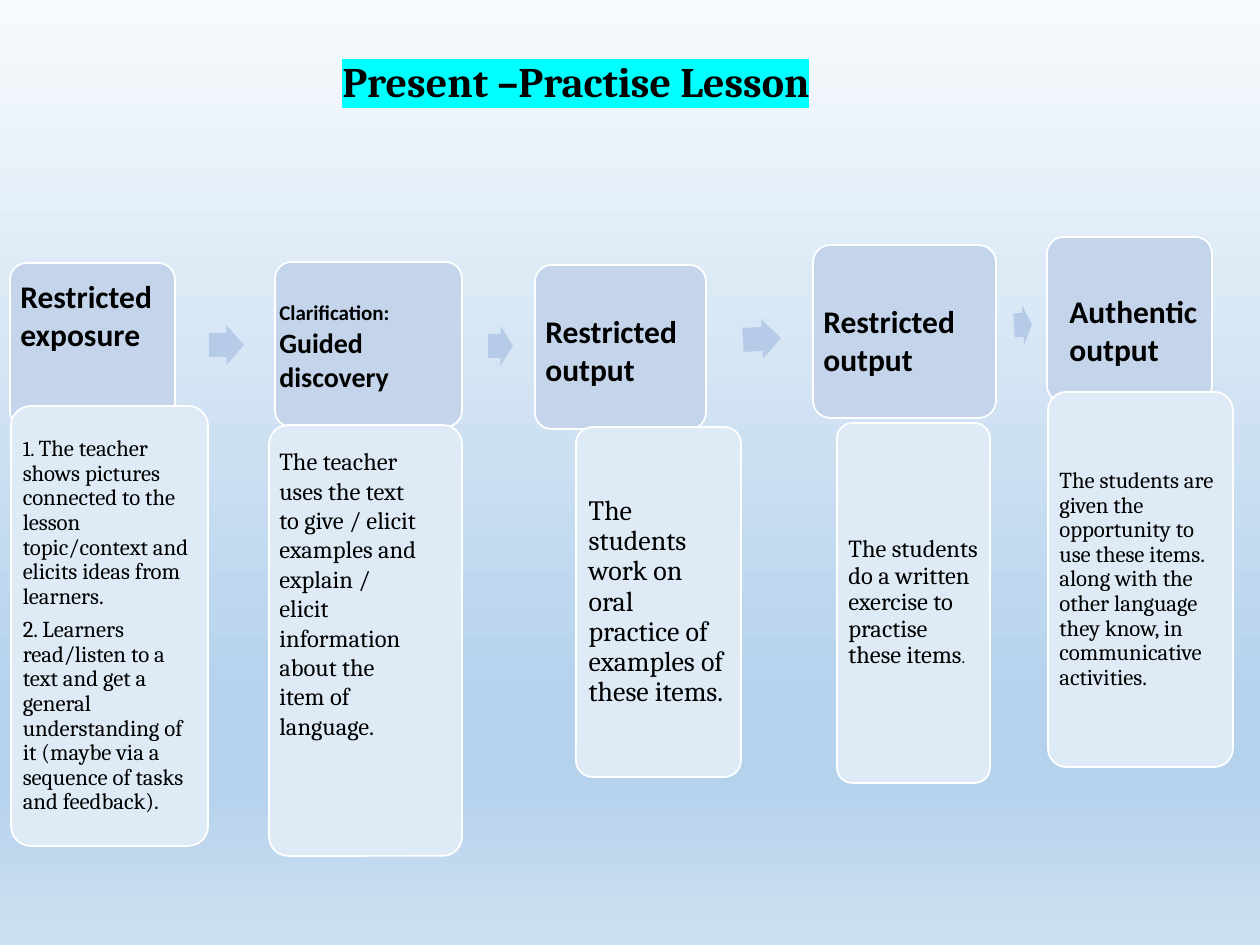
from lxml import etree
from pptx import Presentation
from pptx.dml.color import RGBColor
from pptx.enum.shapes import MSO_SHAPE
from pptx.enum.text import MSO_ANCHOR, MSO_AUTO_SIZE, PP_ALIGN
from pptx.oxml.ns import qn
from pptx.util import Emu, Pt

ROUNDED = MSO_SHAPE.ROUNDED_RECTANGLE
ARROW = MSO_SHAPE.RIGHT_ARROW
MIDDLE = MSO_ANCHOR.MIDDLE
LEFT = PP_ALIGN.LEFT
GROW = MSO_AUTO_SIZE.SHAPE_TO_FIT_TEXT
PX = 914400 / 126
HEAD_FONT, BODY_FONT = "Calibri", "Cambria"
COLORS = {
    "header": "C4D5EB",
    "body": "DEEBF7",
    "arrow": "B5CBE7",
    "outline": "FFFFFF",
    "text": "000000",
    "highlight": "00FFFF",
}
BACKGROUND = [(0, "F7FAFD"), (74, "B5D2EC"), (83, "B5D2EC"), (100, "CEE1F2")]

# Each stage: header box, body box, body inset, body paragraphs of (text, size) runs
STAGES = [
    ((10, 263, 165, 165), (11, 406, 197, 440), 6, [
        [("1. ", 12), ("The teacher shows pictures connected to the lesson "
                       "topic/context and elicits ideas from learners.", 13)],
        [("2. Learners read/listen to a text and get a general understanding of it "
          "(maybe via a sequence of tasks and feedback).", 13)],
    ]),
    ((275, 262, 187, 165), (269, 425, 193, 431), 6, []),
    ((535, 265, 171, 164), (576, 427, 165, 350), 8, [
        [("The students work on oral practice of examples of these items.", 16)],
    ]),
    ((813, 245, 183, 173), (837, 423, 153, 360), 7, [
        [("The students do a written exercise to practise these items", 14), (".", 10)],
    ]),
    ((1047, 237, 165, 165), (1048, 392, 185, 375), 6, [
        [("The students are given the opportunity to use these items. along with the "
          "other language they know, in communicative activities.", 13)],
    ]),
]
ARROWS = [
    ((209, 325, 35, 40), -0.4),
    ((488, 326, 25, 40), 0.6),
    ((743, 319, 38, 40), -3.1),
    ((1014, 305, 18, 40), -3.1),
]
HEADINGS = [
    ((8, 271, 170, 89), [[("Restricted", 18)], [("exposure", 18)]]),
    ((533, 306, 163, 89), [[("Restricted output", 18)]]),
    ((811, 296, 180, 89), [[("Restricted output", 18)]]),
    ((1057, 286, 170, 89), [[("Authentic output", 18)]]),
    ((267, 286, 150, 115), [[("Clarification:", 12), (" Guided discovery", 16)]]),
]
EXPLANATION = [[("The teacher uses the text to give / elicit examples and explain / "
                 "elicit information about the item of language.", 14)]]
TITLE = [[("Present –Practise Lesson", 24)]]


def emu(box):
    return [Emu(round(n * PX)) for n in box]


def rgb(name):
    return RGBColor.from_string(COLORS[name])


def set_background(s):
    fill = s.background.fill
    fill.gradient()
    fill.gradient_angle = 270
    stops = s.element.find(".//" + qn("a:gsLst"))
    for stop in list(stops):
        stops.remove(stop)
    for pos, color in BACKGROUND:
        gs = etree.SubElement(stops, qn("a:gs"), pos=str(pos * 1000))
        etree.SubElement(gs, qn("a:srgbClr"), val=color)


def add_run(p, text, size, font, bold=False, highlight=None):
    r = p.add_run()
    r.text = text
    r.font.size = Pt(size)
    r.font.bold = bold
    r.font.color.rgb = rgb("text")
    if highlight:
        mark = etree.SubElement(r.font._element, qn("a:highlight"))
        etree.SubElement(mark, qn("a:srgbClr"), val=COLORS[highlight])
    r.font.name = font


def write(tf, paragraphs, font, **style):
    tf.word_wrap = True
    for i, runs in enumerate(paragraphs):
        p = tf.add_paragraph() if i else tf.paragraphs[0]
        p.alignment = LEFT
        for text, size in runs:
            add_run(p, text, size, font, **style)


def add_text(s, box, paragraphs, font, **style):
    tf = s.shapes.add_textbox(*emu(box)).text_frame
    write(tf, paragraphs, font, **style)
    tf.auto_size = GROW


def add_card(s, box, fill):
    sp = s.shapes.add_shape(ROUNDED, *emu(box))
    sp.adjustments[0] = 0.1
    sp.shadow.inherit = False
    sp.fill.solid()
    sp.fill.fore_color.rgb = rgb(fill)
    sp.line.color.rgb = rgb("outline")
    sp.line.width = Pt(1)
    return sp


def add_body(s, box, inset, paragraphs):
    tf = add_card(s, box, "body").text_frame
    if not paragraphs:
        return
    tf.vertical_anchor = MIDDLE
    tf.margin_left, tf.margin_top, tf.margin_right, tf.margin_bottom = emu([inset] * 4)
    write(tf, paragraphs, BODY_FONT)
    for p in tf.paragraphs:
        p.line_spacing = 0.9
        p.space_after = Pt(5)


def add_arrow(s, box, angle):
    sp = s.shapes.add_shape(ARROW, *emu(box))
    sp.adjustments[0] = 0.6
    sp.adjustments[1] = 0.5
    sp.rotation = angle
    sp.shadow.inherit = False
    sp.fill.solid()
    sp.fill.fore_color.rgb = rgb("arrow")
    sp.line.fill.background()


def main():
    prs = Presentation()
    prs.slide_width, prs.slide_height = emu((1260, 945))
    s = prs.slides.add_slide(prs.slide_layouts[6])
    set_background(s)
    for header, body, inset, paragraphs in STAGES:
        add_card(s, header, "header")
        add_body(s, body, inset, paragraphs)
    for box, angle in ARROWS:
        add_arrow(s, box, angle)
    for box, paragraphs in HEADINGS:
        add_text(s, box, paragraphs, HEAD_FONT, bold=True)
    add_text(s, (267, 440, 163, 339), EXPLANATION, BODY_FONT)
    add_text(s, (330, 49, 553, 63), TITLE, BODY_FONT, bold=True, highlight="highlight")
    prs.save("out.pptx")


if __name__ == "__main__":
    main()
